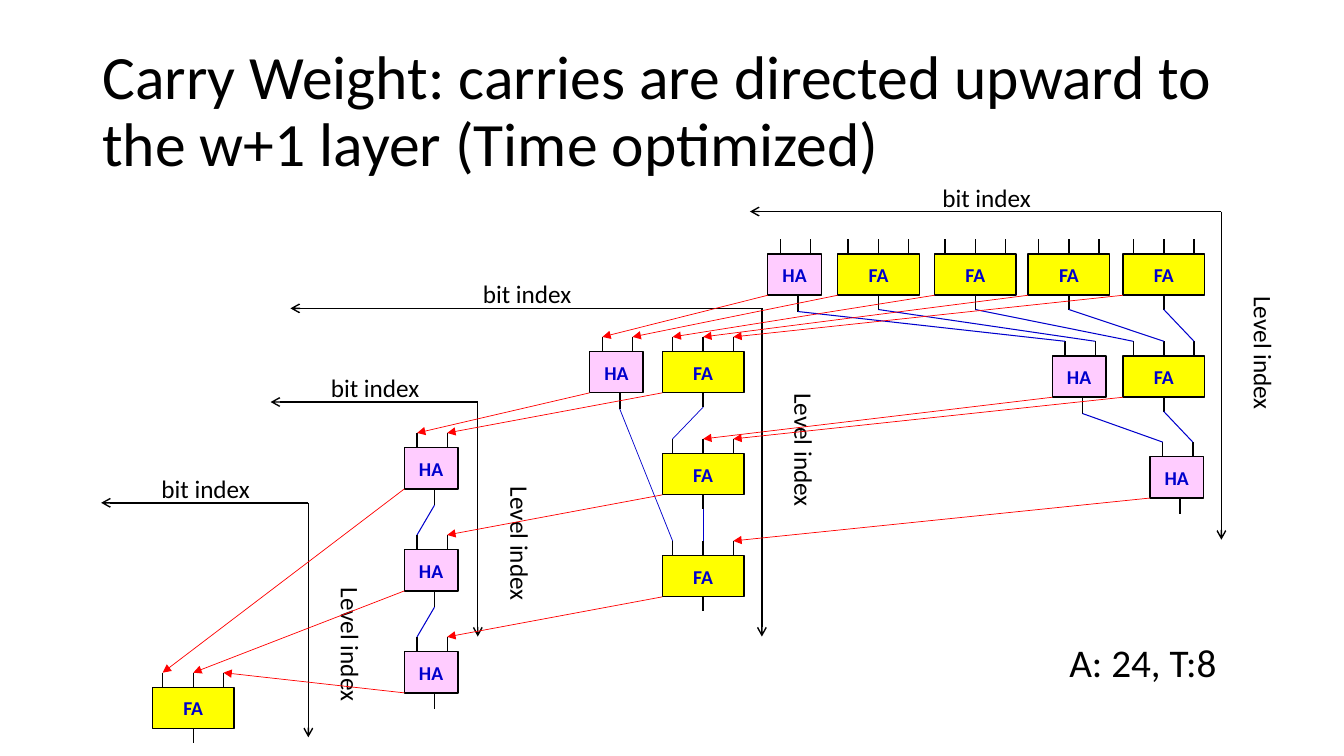
from collections import namedtuple

from lxml import etree
from pptx import Presentation, util as u
from pptx.dml import color
from pptx.enum import shapes, text
from pptx.oxml import ns

Adder = namedtuple("Adder", "inputs carry total")
Kind = namedtuple("Kind", "width fill pins leg_x leg_length")

KINDS = {
    "FA": Kind(2.06, "FFFF00", (0.26, 1.03, 1.79), 1.03, 0.36),
    "HA": Kind(1.35, "FFCCFF", (0.32, 1.08), 0.76, 0.41),
}
ADDER_HEIGHT = 1.04
PIN_LENGTH = 0.37


def rgb(value):
    return color.RGBColor.from_string(value)


class Diagram:
    font = "Calibri"
    ink = "000000"
    blue = "0000CC"
    red = "FF0000"

    def __init__(self, slide):
        self.slide = slide

    def set_font(self, paragraph, size, hue, bold=False):
        paragraph.font.name = self.font
        paragraph.font.size = u.Pt(size)
        paragraph.font.bold = bold
        paragraph.font.color.rgb = rgb(hue)

    def label(self, words, left, top, width, height, size, wrap=False, rotation=0):
        box = self.slide.shapes.add_textbox(u.Cm(left), u.Cm(top), u.Cm(width), u.Cm(height))
        box.rotation = rotation
        box.text_frame.word_wrap = wrap
        paragraph = box.text_frame.paragraphs[0]
        paragraph.text = words
        self.set_font(paragraph, size, self.ink)
        return box

    def title(self, words):
        box = self.label(words, 2.33, 1.01, 29.21, 3.68, 44, wrap=True)
        box.text_frame.vertical_anchor = text.MSO_ANCHOR.MIDDLE
        box.text_frame.paragraphs[0].line_spacing = 0.9

    def line(self, start, end, hue=ink, weight=1, head=None):
        points = [u.Cm(length) for length in (*start, *end)]
        connector = self.slide.shapes.add_connector(shapes.MSO_CONNECTOR.STRAIGHT, *points)
        connector.line.color.rgb = rgb(hue)
        connector.line.width = u.Pt(weight)
        properties = connector.element.spPr
        if head:
            outline = properties.find(ns.qn("a:ln"))
            etree.SubElement(outline, ns.qn("a:tailEnd"), type=head)
        etree.SubElement(properties, ns.qn("a:effectLst"))
        return connector

    def adder(self, name, left, top):
        kind = KINDS[name]
        bottom = top + ADDER_HEIGHT
        box = self.slide.shapes.add_shape(
            shapes.MSO_SHAPE.RECTANGLE,
            u.Cm(left), u.Cm(top), u.Cm(kind.width), u.Cm(ADDER_HEIGHT))
        box.shadow.inherit = False
        box.fill.solid()
        box.fill.fore_color.rgb = rgb(kind.fill)
        box.line.color.rgb = rgb(self.ink)
        box.line.width = u.Pt(1)
        box.text_frame.word_wrap = False
        box.text_frame.vertical_anchor = text.MSO_ANCHOR.MIDDLE
        paragraph = box.text_frame.paragraphs[0]
        paragraph.text = name
        paragraph.alignment = text.PP_ALIGN.CENTER
        self.set_font(paragraph, 14, self.blue, bold=True)

        middle = kind.width / 2
        inputs = [(left + pin, top - PIN_LENGTH) for pin in kind.pins]
        for pin, tip in zip(kind.pins, inputs):
            connector = self.line((left + pin, top), tip)
            if pin == middle:
                connector.begin_connect(box, 0)
        total = (left + kind.leg_x, bottom + kind.leg_length)
        leg = self.line((left + kind.leg_x, bottom), total)
        if kind.leg_x == middle:
            leg.begin_connect(box, 2)
        return Adder(inputs, (left, bottom), total)

    def axes(self, right, top, width, height):
        corner = (right, top)
        self.line(corner, (right - width, top), head="arrow")
        self.line(corner, (right, top + height), head="arrow")
        self.label("bit index", right - width / 2 - 1.34, top - 0.87, 2.92, 1.02, 18)
        self.label("Level index", right - 0.63, top + 3.08, 3.4, 1.02, 18, rotation=90)

    def sum_wire(self, source, target, pin, weight=0.75):
        self.line(source.total, target.inputs[pin], self.blue, weight)

    def carry_wire(self, source, target, pin):
        self.line(source.carry, target.inputs[pin], self.red, 0.5, "triangle")


def main():
    presentation = Presentation()
    presentation.slide_width = u.Cm(33.87)
    presentation.slide_height = u.Cm(19.05)
    slide = presentation.slides.add_slide(presentation.slide_layouts[6])
    diagram = Diagram(slide)
    diagram.title("Carry Weight: carries are directed upward to the w+1 layer (Time optimized)")

    wide, narrow = (11.88, 8.27), (5.22, 5.91)
    for right, top, size in [(30.78, 5.33, wide), (19.2, 7.77, wide),
                             (12.04, 10.13, narrow), (7.77, 12.67, narrow)]:
        diagram.axes(right, top, *size)

    first_row = [diagram.adder("FA", left, 6.4) for left in (28.3, 25.91, 23.55, 21.11)]
    first_row.append(diagram.adder("HA", 19.35, 6.4))
    second_full = diagram.adder("FA", 28.3, 8.97)
    second_half = diagram.adder("HA", 26.52, 8.97)
    third_half = diagram.adder("HA", 28.98, 11.51)

    weight1_half = diagram.adder("HA", 14.86, 8.86)
    weight1 = [diagram.adder("FA", 16.69, 8.86 + 2.57 * level) for level in range(3)]
    weight2 = [diagram.adder("HA", 10.19, 11.28 + 2.57 * level) for level in range(3)]
    weight3 = diagram.adder("FA", 3.84, 17.32)

    second_pins = [(second_full, 2), (second_full, 1), (second_full, 0),
                   (second_half, 1), (second_half, 0)]
    for source, (target, pin) in zip(first_row, second_pins):
        diagram.sum_wire(source, target, pin)
    diagram.sum_wire(second_full, third_half, 1)
    diagram.sum_wire(second_half, third_half, 0)
    diagram.sum_wire(weight1[0], weight1[1], 0, 0.5)
    diagram.sum_wire(weight1[1], weight1[2], 1, 0.5)
    diagram.sum_wire(weight1_half, weight1[2], 0, 0.5)
    for source, target in zip(weight2, weight2[1:]):
        diagram.sum_wire(source, target, 0)

    weight1_pins = [(weight1[0], 2), (weight1[0], 1), (weight1[0], 0),
                    (weight1_half, 1), (weight1_half, 0)]
    for source, (target, pin) in zip(first_row, weight1_pins):
        diagram.carry_wire(source, target, pin)
    diagram.carry_wire(second_full, weight1[1], 2)
    diagram.carry_wire(second_half, weight1[1], 1)
    diagram.carry_wire(third_half, weight1[2], 2)
    diagram.carry_wire(weight1_half, weight2[0], 0)
    for source, target in zip(weight1, weight2):
        diagram.carry_wire(source, target, 1)
    for pin, source in enumerate(weight2):
        diagram.carry_wire(source, weight3, pin)

    diagram.label("A: 24, T:8", 26.7, 15.95, 4.27, 1.45, 28)
    presentation.save("out.pptx")


if __name__ == "__main__":
    main()
